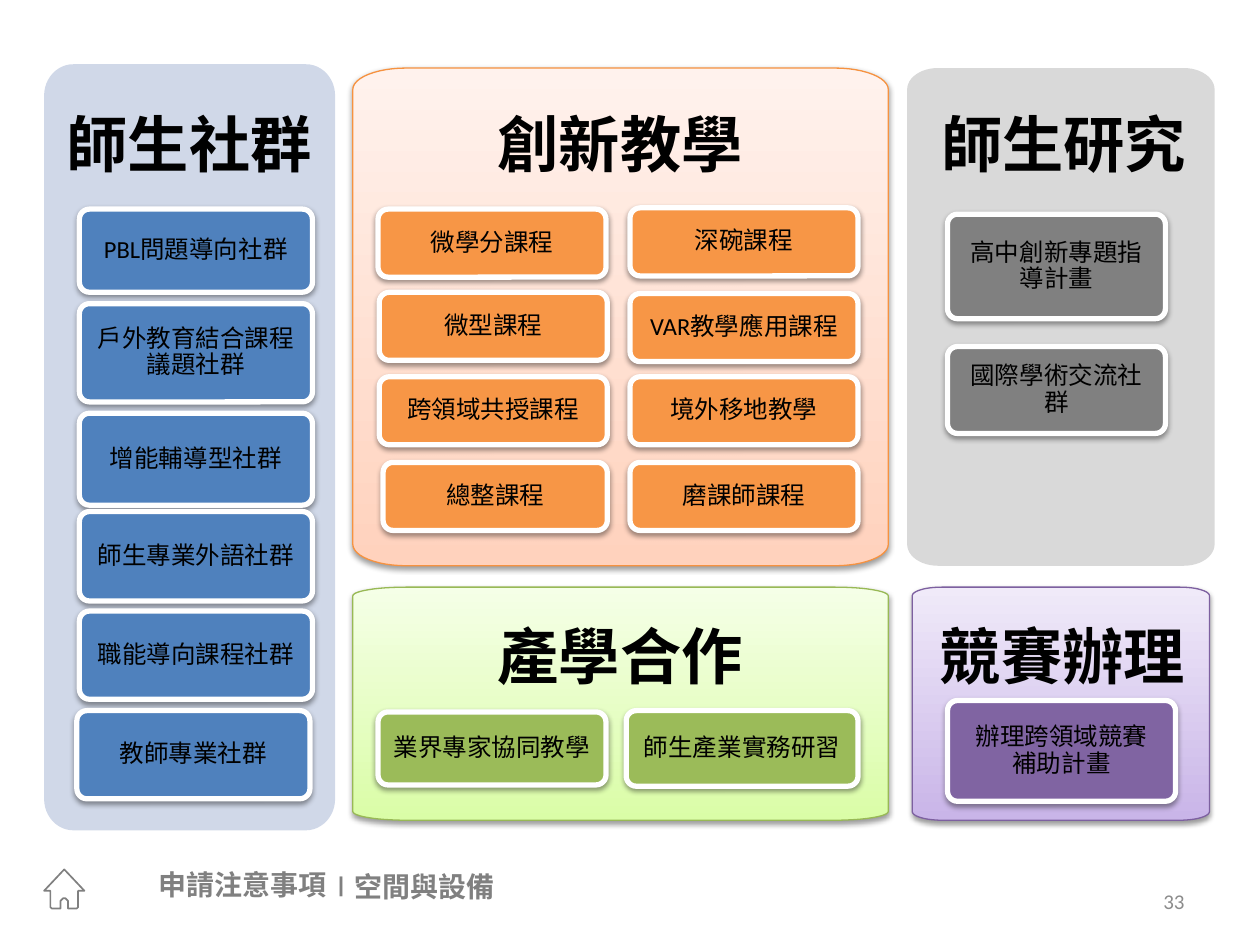
import math
from lxml import etree
from pptx import Presentation
from pptx.dml.color import RGBColor
from pptx.enum import shapes, text
from pptx.oxml.ns import qn
from pptx.util import Inches, Pt


def finish(shape, fill, line, width, shadow):
    shape.shadow.inherit = False
    if len(fill) == 1:
        shape.fill.solid()
        shape.fill.fore_color.rgb = RGBColor.from_string(fill[0])
    elif fill:
        shape.fill.gradient()
        shape.fill.gradient_angle = 90
        for stop, tint, place in zip(shape.fill.gradient_stops, fill, (0, 1)):
            stop.color.rgb = RGBColor.from_string(tint)
            stop.position = place
    else:
        shape.fill.background()
    if line:
        shape.line.color.rgb = RGBColor.from_string(line)
        shape.line.width = Pt(width)
    else:
        shape.line.fill.background()
    if shadow:
        effects = shape._element.spPr.find(qn("a:effectLst"))
        outer = etree.SubElement(effects, qn("a:outerShdw"), blurRad=str(Pt(3.1)),
                                 dist=str(Pt(1.6)), dir="5400000", rotWithShape="0")
        black = etree.SubElement(outer, qn("a:srgbClr"), val="000000")
        etree.SubElement(black, qn("a:alpha"), val="38000")


def write(shape, words, size, color, align, font="Calibri", bold=False):
    paragraph = shape.text_frame.paragraphs[0]
    paragraph.text = words
    paragraph.alignment = align
    paragraph.font.size = Pt(size)
    paragraph.font.bold = bold
    paragraph.font.color.rgb = RGBColor.from_string(color)
    paragraph.font.name = font
    etree.SubElement(paragraph._p.pPr.find(qn("a:defRPr")), qn("a:ea"),
                     typeface="Noto Sans CJK SC")
    return paragraph


prs = Presentation()
prs.slide_width, prs.slide_height = Inches(10), Inches(7.5)
slide = prs.slides.add_slide(prs.slide_layouts[6])
LEFT, CENTER, RIGHT = text.PP_ALIGN.LEFT, text.PP_ALIGN.CENTER, text.PP_ALIGN.RIGHT
HEADING = "Noto Sans CJK SC"

panels = [
    (0.35, 0.51, 2.31, 6.08, 0.25, ["D0D8E8"], None),
    (2.8, 4.66, 4.25, 1.85, 0.07, ["DAFDA7", "F5FFE7"], "98B955"),
    (2.8, 0.54, 4.25, 3.95, 0.17, ["FFD2BD", "FFF2ED"], "F69240"),
    (7.24, 4.66, 2.36, 1.85, 0.07, ["C9B5E8", "F0EAF9"], "7D60A0"),
    (7.2, 0.54, 2.44, 3.95, 0.17, ["D9D9D9"], None),
]
for x, y, w, h, corner_height, fill, line in panels:
    corner_width = w / 10
    outline = []
    for quarter, (cx, cy) in enumerate([
            (x + w - corner_width, y + h - corner_height), (x + corner_width, y + h - corner_height),
            (x + corner_width, y + corner_height), (x + w - corner_width, y + corner_height)]):
        for step in range(13):
            angle = math.radians(90 * quarter + 7.5 * step)
            outline.append((Inches(cx + corner_width * math.cos(angle)),
                            Inches(cy + corner_height * math.sin(angle))))
    builder = slide.shapes.build_freeform(*outline[0])
    builder.add_line_segments(outline[1:])
    finish(builder.convert_to_shape(), fill, line, 0.75, line is not None)

card_groups = [
    ("4F81BD", 0.04, [
        (0.63, 1.66, 1.85, 0.66, "PBL問題導向社群"),
        (0.63, 2.41, 1.85, 0.78, "戶外教育結合課程議題社群"),
        (0.63, 3.28, 1.85, 0.73, "增能輔導型社群"),
        (0.63, 4.06, 1.85, 0.71, "師生專業外語社群"),
        (0.63, 4.85, 1.85, 0.7, "職能導向課程社群"),
        (0.61, 5.64, 1.85, 0.7, "教師專業社群")]),
    ("F79646", 0.05, [
        (3, 1.66, 1.81, 0.54, "微學分課程"), (5, 1.65, 1.81, 0.54, "深碗課程"),
        (3.01, 2.32, 1.81, 0.54, "微型課程"), (5, 2.33, 1.81, 0.54, "VAR教學應用課程"),
        (3.01, 2.99, 1.81, 0.54, "跨領域共授課程"), (5, 2.99, 1.81, 0.54, "境外移地教學"),
        (3.04, 3.67, 1.78, 0.54, "總整課程"), (5, 3.67, 1.81, 0.54, "磨課師課程")]),
    ("9BBB59", 0.05, [
        (3, 5.65, 1.81, 0.58, "業界專家協同教學"), (4.97, 5.64, 1.84, 0.6, "師生產業實務研習")]),
    ("8064A2", 0.05, [(7.52, 5.56, 1.81, 0.8, "辦理跨領域競賽\v補助計畫")]),
    ("808080", 0.07, [
        (7.52, 1.7, 1.73, 0.83, "高中創新專題指導計畫"),
        (7.52, 2.75, 1.73, 0.69, "國際學術交流社群")]),
]
for fill, margin, cards in card_groups:
    for x, y, w, h, words in cards:
        card = slide.shapes.add_shape(shapes.MSO_SHAPE.ROUNDED_RECTANGLE,
                                      Inches(x), Inches(y), Inches(w), Inches(h))
        card.adjustments[0] = 0.08 / h
        finish(card, [fill], "FFFFFF", 3, True)
        frame = card.text_frame
        frame.word_wrap = True
        frame.vertical_anchor = text.MSO_ANCHOR.MIDDLE
        frame.margin_left = frame.margin_right = Inches(margin)
        frame.margin_top = frame.margin_bottom = Inches(0.03)
        write(card, words, 14, "000000", CENTER).line_spacing = 0.9

labels = [
    (0.43, 0.79, 2.15, 0.69, "師生社群", 35, "000000", LEFT, HEADING),
    (3.85, 0.79, 2.15, 0.69, "創新教學", 35, "000000", LEFT, HEADING),
    (7.37, 0.79, 2.15, 0.69, "師生研究", 35, "000000", LEFT, HEADING),
    (3.85, 4.86, 2.15, 0.69, "產學合作", 35, "000000", LEFT, HEADING),
    (7.36, 4.86, 2.15, 0.69, "競賽辦理", 35, "000000", LEFT, HEADING),
    (1.14, 6.84, 1.57, 0.37, "申請注意事項", 16, "808080", CENTER, HEADING),
    (2.42, 6.85, 1.68, 0.37, "∣空間與設備", 16, "808080", CENTER, HEADING),
    (7.17, 6.95, 2.33, 0.4, "33", 12, "8C8C8C", RIGHT, "Calibri"),
]
for x, y, w, h, words, size, color, align, font in labels:
    label = slide.shapes.add_textbox(Inches(x), Inches(y), Inches(w), Inches(h))
    label.text_frame.word_wrap = font != HEADING
    label.text_frame.vertical_anchor = (
        text.MSO_ANCHOR.TOP if font == HEADING else text.MSO_ANCHOR.MIDDLE)
    write(label, words, size, color, align, font, font == HEADING)

house = [(0.51, 6.9), (0.35, 7.07), (0.4, 7.07), (0.4, 7.2), (0.41, 7.21), (0.48, 7.21),
         (0.48, 7.15), (0.5, 7.13), (0.52, 7.13), (0.54, 7.15), (0.54, 7.21), (0.61, 7.21),
         (0.62, 7.2), (0.62, 7.07), (0.67, 7.07)]
corners = [(Inches(x), Inches(y)) for x, y in house]
builder = slide.shapes.build_freeform(*corners[0])
builder.add_line_segments(corners[1:])
finish(builder.convert_to_shape(), [], "808080", 0.96, False)

prs.save("out.pptx")
